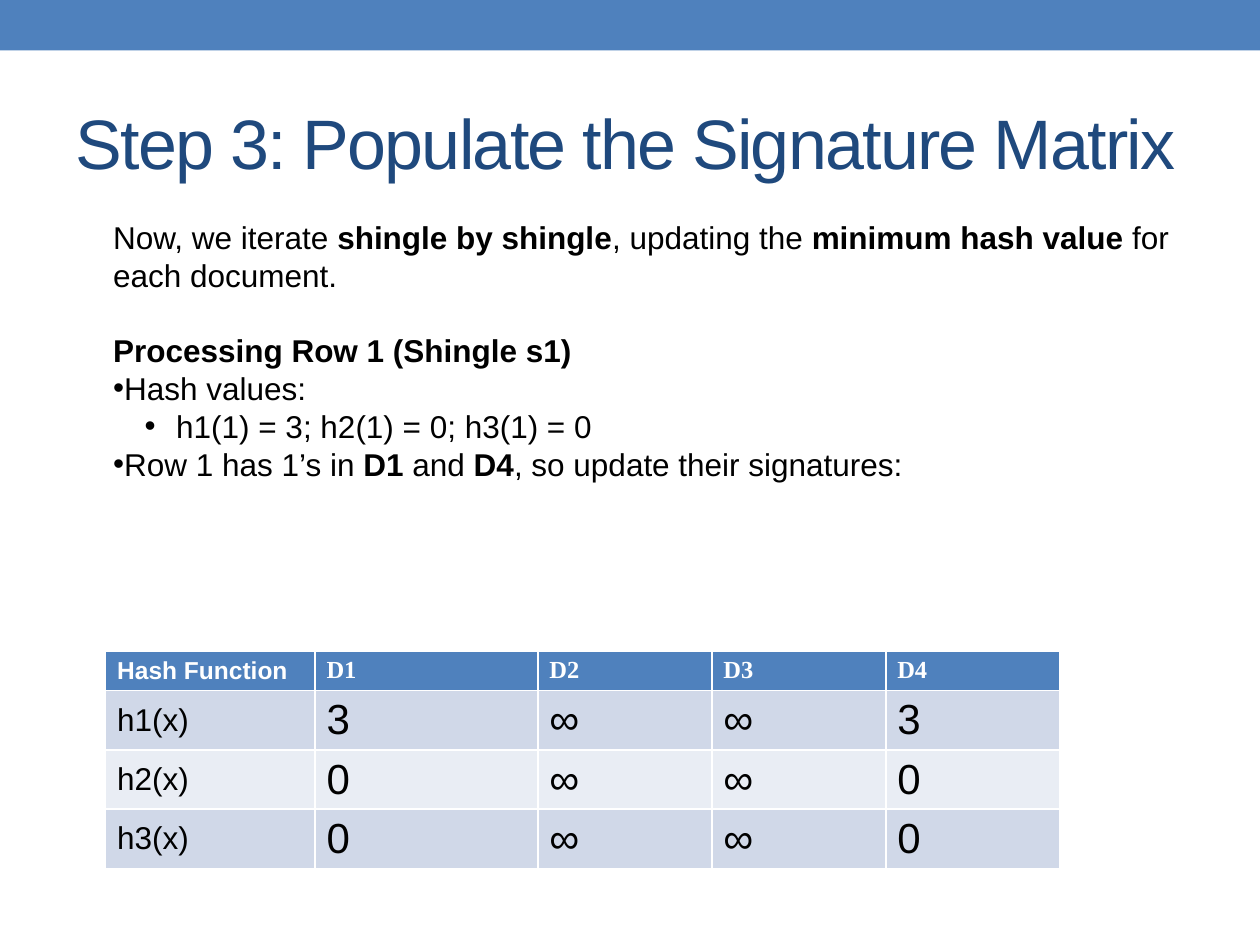
from lxml import etree
from pptx import Presentation
from pptx import util as u
from pptx.dml.color import RGBColor
from pptx.enum import shapes, text
from pptx.oxml.ns import qn

BLUE, NAVY, BLACK, WHITE = "4F81BD", "1F497D", "000000", "FFFFFF"
BANDS = ["D0D8E8", "E9EDF4"]
TITLE = "Step 3: Populate the Signature Matrix"
STEPS = [
    {"runs": ["Now, we iterate ", "*shingle by shingle", ", updating the ",
              "*minimum hash value", " for each document."]},
    {"runs": ["*Processing Row 1 (Shingle s1)"], "before": 21.6},
    {"runs": ["Hash values:"], "bullet": (0, 0)},
    {"runs": ["h1(1) = 3; h2(1) = 0; h3(1) = 0"], "bullet": (36, -18), "level": 1},
    {"runs": ["Row 1 has 1’s in ", "*D1", " and ", "*D4", ", so update their signatures:"],
     "bullet": (0, 0)},
]
SIGNATURES = [
    ["Hash Function", "D1", "D2", "D3", "D4"],
    ["h1(x)", "3", "∞", "∞", "3"],
    ["h2(x)", "0", "∞", "∞", "0"],
    ["h3(x)", "0", "∞", "∞", "0"],
]
COLUMN_WIDTHS = [119.6, 127.4, 99.4, 99.4, 99.4]
ROW_HEIGHTS = [22.2, 33.9, 33.9, 33.9]


def rgb(value):
    return RGBColor.from_string(value)


def style(font, size, color, name="Arial", bold=None):
    font.size, font.name, font.bold = u.Pt(size), name, bold
    font.color.rgb = rgb(color)


def box(*lengths):
    return [u.Pt(length) for length in lengths]


def place(shape, *lengths):
    shape.left, shape.top, shape.width, shape.height = box(*lengths)


def add_bullet(paragraph, margin, indent):
    properties = paragraph._p.get_or_add_pPr()
    properties.set("marL", str(u.Pt(margin)))
    properties.set("indent", str(u.Pt(indent)))
    etree.SubElement(properties, qn("a:buFont")).set("typeface", "Arial")
    etree.SubElement(properties, qn("a:buChar")).set("char", "•")


def add_banner(slide):
    banner = slide.shapes.add_shape(shapes.MSO_SHAPE.RECTANGLE, *box(0, 0, 720, 28.8))
    banner.shadow.inherit = False
    banner.fill.solid()
    banner.fill.fore_color.rgb = rgb(BLUE)
    banner.line.fill.background()


def add_title(slide):
    title = slide.shapes.title
    place(title, 36, 42, 648, 78)
    title.text_frame.text = TITLE
    title.text_frame.vertical_anchor = text.MSO_ANCHOR.MIDDLE
    heading = title.text_frame.paragraphs[0]
    heading.alignment = text.PP_ALIGN.LEFT
    style(heading.font, 40, NAVY)
    heading.runs[0].font._element.set("spc", "-100")


def add_steps(slide):
    frame = slide.shapes.add_textbox(*box(57.6, 121, 648, 159.8)).text_frame
    frame.word_wrap = True
    for index, step in enumerate(STEPS):
        paragraph = frame.add_paragraph() if index else frame.paragraphs[0]
        paragraph.level = step.get("level", 0)
        paragraph.line_spacing = u.Pt(21.6)
        paragraph.space_before = u.Pt(step.get("before", 0))
        if "bullet" in step:
            add_bullet(paragraph, *step["bullet"])
        style(paragraph.font, 18, BLACK)
        for wording in step["runs"]:
            run = paragraph.add_run()
            run.text = wording.lstrip("*")
            run.font.bold = wording.startswith("*")


def add_signatures(slide):
    table = slide.shapes.add_table(
        len(SIGNATURES), len(COLUMN_WIDTHS),
        *box(60.4, 372.4, sum(COLUMN_WIDTHS), sum(ROW_HEIGHTS))).table
    for column, width in zip(table.columns, COLUMN_WIDTHS):
        column.width = u.Pt(width)
    for r, values in enumerate(SIGNATURES):
        table.rows[r].height = u.Pt(ROW_HEIGHTS[r])
        for c, value in enumerate(values):
            cell = table.cell(r, c)
            cell.text = value
            cell.margin_left = cell.margin_right = u.Pt(6.6)
            cell.margin_top = cell.margin_bottom = u.Pt(3)
            cell.fill.solid()
            cell.fill.fore_color.rgb = rgb(BANDS[(r - 1) % 2] if r else BLUE)
            font = cell.text_frame.paragraphs[0].font
            if r:
                cell.vertical_anchor = text.MSO_ANCHOR.MIDDLE
                style(font, 24 if c else 18, BLACK, bold=False)
            else:
                style(font, 14, WHITE, "Times New Roman" if c else "Arial", True)


def main():
    """Build the signature matrix slide."""
    deck = Presentation()
    deck.slide_width, deck.slide_height = box(720, 540)
    slide = deck.slides.add_slide(deck.slide_layouts[5])
    add_banner(slide)
    add_title(slide)
    add_signatures(slide)
    add_steps(slide)
    deck.save("out.pptx")


if __name__ == "__main__":
    main()
